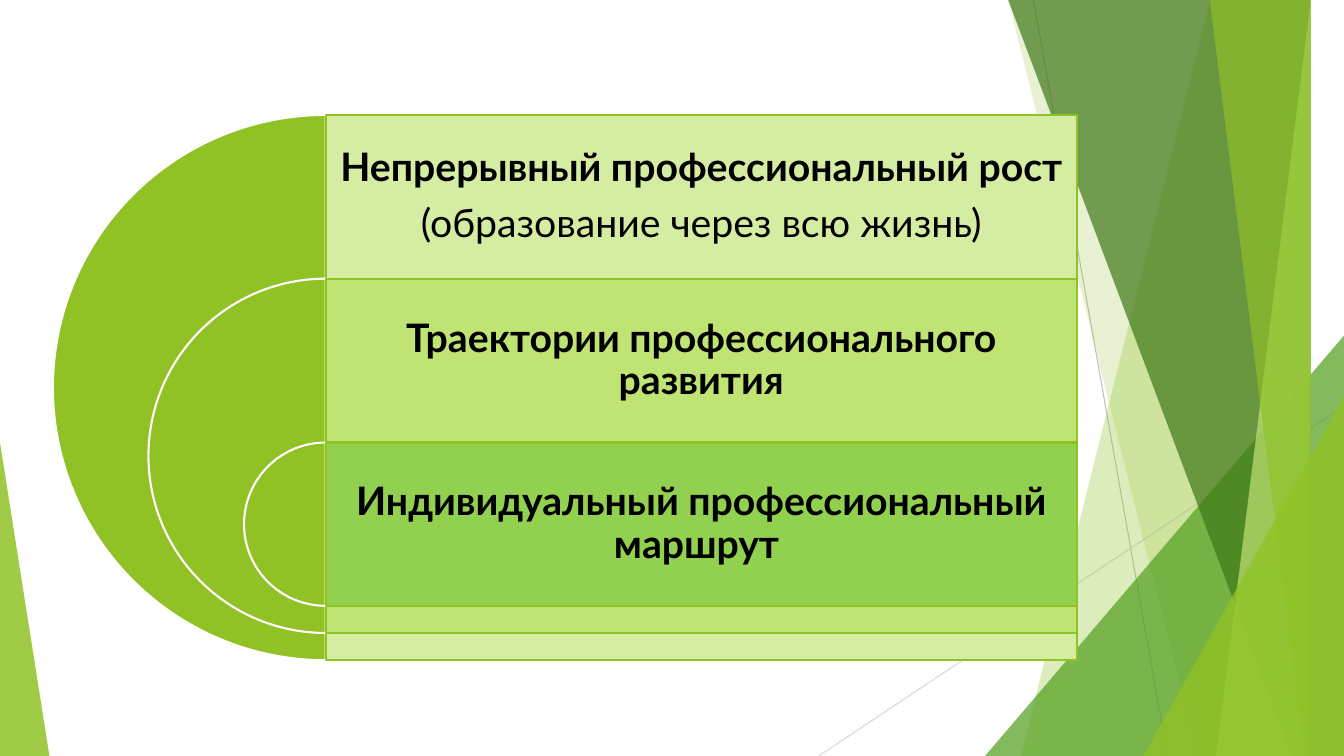
from lxml import etree
from pptx import Presentation
from pptx.dml.color import RGBColor
from pptx.enum.shapes import MSO_CONNECTOR, MSO_SHAPE
from pptx.enum.text import MSO_ANCHOR, PP_ALIGN
from pptx.oxml.ns import qn
from pptx.util import Inches, Pt

STRAIGHT = MSO_CONNECTOR.STRAIGHT
PIE, RECTANGLE, TRIANGLE = MSO_SHAPE.CHORD, MSO_SHAPE.RECTANGLE, MSO_SHAPE.ISOSCELES_TRIANGLE
PIE = MSO_SHAPE.PIE
MIDDLE, CENTER = MSO_ANCHOR.MIDDLE, PP_ALIGN.CENTER

WHITE = RGBColor(0xFF, 0xFF, 0xFF)
BLACK = RGBColor(0x00, 0x00, 0x00)
LIME = RGBColor(0x90, 0xC2, 0x26)
LIGHT_LIME = RGBColor(0xC0, 0xE4, 0x74)
PALE_LIME = RGBColor(0xD5, 0xED, 0xA2)
GREEN = RGBColor(0x54, 0xA0, 0x21)
DARK_GREEN = RGBColor(0x3F, 0x78, 0x19)
BRIGHT_GREEN = RGBColor(0x92, 0xD0, 0x50)
GRAY = RGBColor(0xBF, 0xBF, 0xBF)
LIGHT_GRAY = RGBColor(0xD9, 0xD9, 0xD9)

WIDTH, HEIGHT = 13.33, 7.5
FONT, TEXT_SIZE = "Lato", 28

# Nested half discs share a centre line; each is one row lower and smaller.
AXIS, TOP, ROW = 3.23, 1.14, 1.625
OUTER, SHRINK = 5.41, 1.895
BAND_WIDTH = 7.45

# Fill and paragraphs (text, bold) of each level, from the outermost in.
LEVELS = [
    (PALE_LIME, [("Непрерывный профессиональный рост ", True),
                 ("(образование через всю жизнь)", False)]),
    (LIGHT_LIME, [("Траектории профессионального развития", True)]),
    (BRIGHT_GREEN, [("Индивидуальный профессиональный маршрут ", True)]),
]


def paint(shape, color, opacity=100, outline=None):
    """Fill a shape, with opacity in percent and an optional outline."""
    shape.shadow.inherit = False
    shape.fill.solid()
    shape.fill.fore_color.rgb = color
    if opacity < 100:
        fill_color = shape.fill._xPr.find(qn("a:solidFill"))[0]
        etree.SubElement(fill_color, qn("a:alpha"), val=str(opacity * 1000))
    if outline is None:
        shape.line.fill.background()
    else:
        shape.line.color.rgb = outline
        shape.line.width = Pt(1.5)


def add_preset(page, kind, left, top, width, height, adjustments=()):
    shape = page.shapes.add_shape(
        kind, Inches(left), Inches(top), Inches(width), Inches(height))
    for index, value in enumerate(adjustments):
        shape.adjustments[index] = value
    return shape


def add_hairline(page, start, end, color):
    line = page.shapes.add_connector(STRAIGHT, *map(Inches, start + end))
    line.line.color.rgb = color
    line.line.width = Pt(0.75)
    etree.SubElement(line._element.spPr, qn("a:effectLst"))


def add_shard(page, top_left, bottom_left, color, opacity):
    """Draw a full-height facet that reaches the right edge of the slide."""
    builder = page.shapes.build_freeform(top_left, 0, scale=Inches(1))
    builder.add_line_segments(
        [(WIDTH, 0), (WIDTH, HEIGHT), (bottom_left, HEIGHT)], close=True)
    paint(builder.convert_to_shape(), color, opacity)


def add_corner(page, left, width, height, apex, color, opacity):
    """Draw a right triangle standing on the bottom edge of the slide."""
    corner = add_preset(page, TRIANGLE, left, HEIGHT - height, width, height, [apex])
    paint(corner, color, opacity)


def add_backdrop(page):
    add_hairline(page, (10.25, 0), (11.58, HEIGHT), GRAY)
    add_hairline(page, (WIDTH, 4.03), (8.12, HEIGHT), LIGHT_GRAY)
    add_shard(page, 12.28, 10.04, LIME, 30)
    add_shard(page, 10.5, 11.83, LIME, 20)
    add_corner(page, 9.77, 3.56, 4.17, 1, GREEN, 72)
    add_shard(page, 10.21, 12.91, DARK_GREEN, 70)
    add_shard(page, 13.03, 11.92, LIGHT_LIME, 70)
    add_shard(page, 11.96, 13.18, LIME, 65)
    add_corner(page, 11.34, 1.99, 3.57, 1, LIME, 80)
    add_corner(page, 0, 0.49, 3.11, 0, LIME, 85)


def add_label(page, top, paragraphs):
    box = page.shapes.add_textbox(
        Inches(AXIS), Inches(top), Inches(BAND_WIDTH), Inches(ROW))
    frame = box.text_frame
    frame.word_wrap = True
    frame.vertical_anchor = MIDDLE
    frame.margin_left = frame.margin_right = Inches(0.12)
    frame.margin_top = frame.margin_bottom = Inches(0.12)
    for index, (text, bold) in enumerate(paragraphs):
        para = frame.add_paragraph() if index else frame.paragraphs[0]
        para.alignment = CENTER
        para.line_spacing = 0.9
        para.space_after = Pt(0.35 * TEXT_SIZE)
        span = para.add_run()
        span.text = text
        span.font.name = FONT
        span.font.size = Pt(TEXT_SIZE)
        span.font.bold = bold
        span.font.color.rgb = BLACK


def add_level(page, index, color, paragraphs):
    size = OUTER - index * SHRINK
    top = TOP + index * ROW
    half_disc = add_preset(page, PIE, AXIS - size / 2, top, size, size, [54, 162])
    paint(half_disc, LIME, outline=WHITE)
    band = add_preset(page, RECTANGLE, AXIS, top, BAND_WIDTH, size)
    paint(band, color, outline=LIME)
    add_label(page, top, paragraphs)


def main():
    deck = Presentation()
    deck.slide_width, deck.slide_height = Inches(WIDTH), Inches(HEIGHT)
    page = deck.slides.add_slide(deck.slide_layouts[6])
    add_backdrop(page)
    for index, (color, paragraphs) in enumerate(LEVELS):
        add_level(page, index, color, paragraphs)
    deck.save("out.pptx")


if __name__ == "__main__":
    main()
